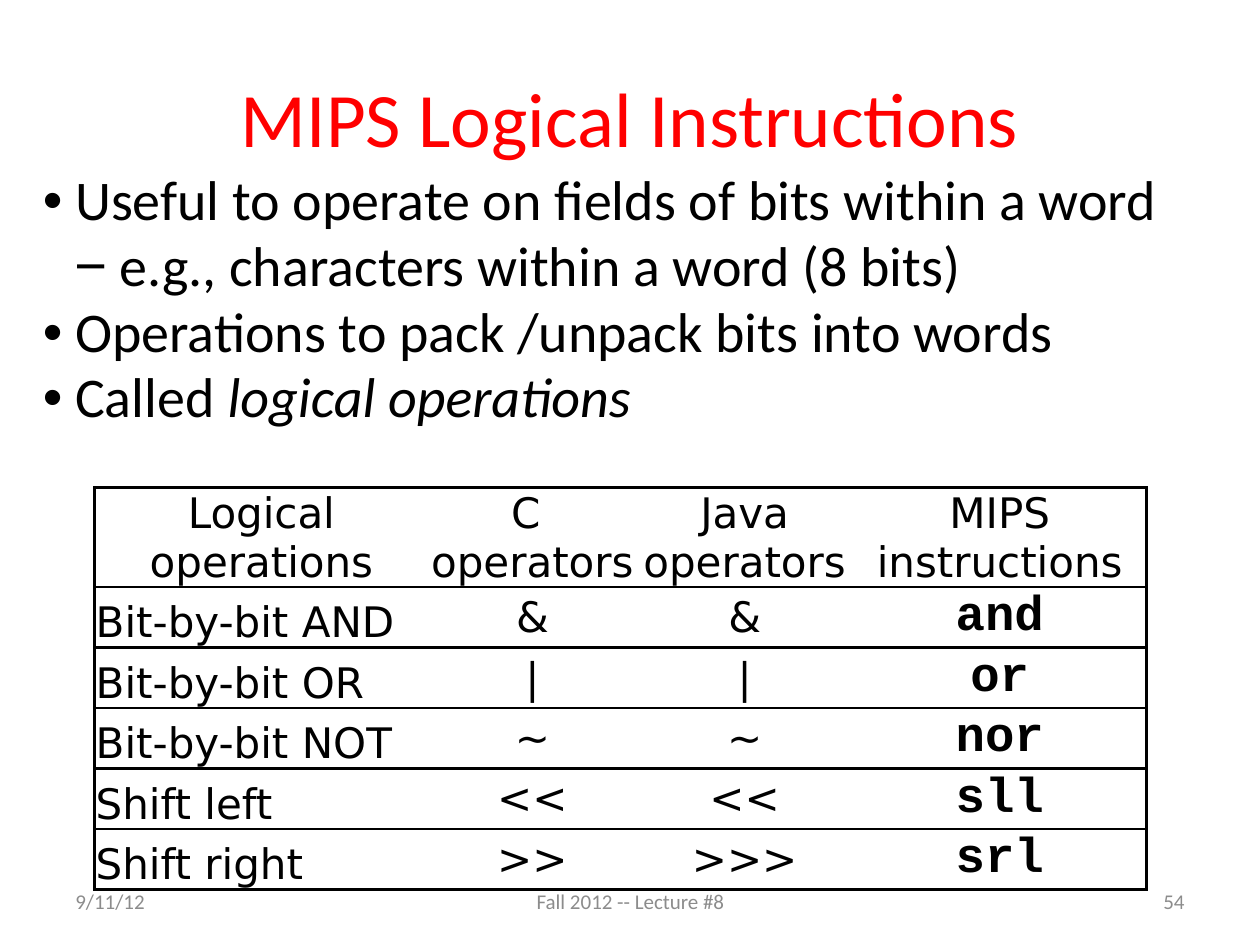
from pptx import Presentation
from pptx.util import Inches, Pt
from pptx.dml.color import RGBColor
from pptx.enum.text import PP_ALIGN, MSO_ANCHOR
from lxml import etree

INK = {"title": "FF0000", "text": "000000", "foot": "8C8C8C", "back": "FFFFFF"}
NS = "{http://schemas.openxmlformats.org/drawingml/2006/main}"


def add_run(para, text, size, font, ink):
    run = para.add_run()
    run.text = text
    run.font.size = Pt(size)
    run.font.name = font
    run.font.color.rgb = RGBColor.from_string(INK[ink])
    return run


def add_edge(cell, side, shown):
    line = etree.SubElement(cell._tc.get_or_add_tcPr(), NS + "ln" + side, w=str(Pt(1.5)))
    if shown:
        fill = etree.SubElement(line, NS + "solidFill")
        etree.SubElement(fill, NS + "srgbClr", val=INK["text"])
    else:
        etree.SubElement(line, NS + "noFill")


deck = Presentation()
deck.slide_width, deck.slide_height = Inches(10), Inches(7.5)
slide = deck.slides.add_slide(deck.slide_layouts[1])

title = slide.shapes.title
title.left, title.top, title.width, title.height = map(Inches, (0.5, 0.3, 9, 1.25))
title.text_frame.vertical_anchor = MSO_ANCHOR.MIDDLE
para = title.text_frame.paragraphs[0]
para.alignment = PP_ALIGN.CENTER
add_run(para, "MIPS Logical Instructions", 44, "Calibri", "title")

body = slide.placeholders[1]
body.left, body.top, body.width, body.height = map(Inches, (0.24, 1.28, 9.52, 2.32))
points = [
    (0, [" Useful to operate on fields of bits within a word"]),
    (1, [" e.g., characters within a word (8 bits)"]),
    (0, [" Operations to pack /unpack bits into words"]),
    (0, [" Called ", "logical operations"]),
]
for i, (level, parts) in enumerate(points):
    para = body.text_frame.paragraphs[0] if i == 0 else body.text_frame.add_paragraph()
    para.level = level
    para.line_spacing = 0.98
    para.space_before = para.space_after = Pt(0)
    props = para._p.get_or_add_pPr()
    props.set("marL", str(Inches(0.5 * level)))
    props.set("indent", str(Inches(-0.25 * level)))
    etree.SubElement(props, NS + "buFont", typeface="Arial")
    etree.SubElement(props, NS + "buChar", char="•−"[level])
    for j, part in enumerate(parts):
        run = add_run(para, part, 32, "Calibri", "text")
        if j:
            run.font.italic = True

rows = [
    ("Logical operations", "C \noperators", "Java operators", "MIPS instructions"),
    ("Bit-by-bit AND", "&", "&", "and"),
    ("Bit-by-bit OR", "|", "|", "or"),
    ("Bit-by-bit NOT", "~", "~", "nor"),
    ("Shift left", "<<", "<<", "sll"),
    ("Shift right", ">>", ">>>", "srl"),
]
widths = [2.65, 1.65, 1.72, 2.33]
last = len(widths) - 1
frame = slide.shapes.add_table(len(rows), len(widths), Inches(0.75), Inches(3.87),
                               Inches(8.35), Inches(3.19))
table = frame.table
table.first_row = table.horz_banding = False
for col, width in zip(table.columns, widths):
    col.width = Inches(width)
for r, row in enumerate(rows):
    table.rows[r].height = Inches(0.48 if r else 0.79)
    for c, text in enumerate(row):
        cell = table.cell(r, c)
        cell.margin_left = cell.margin_right = cell.margin_top = Inches(0.01)
        cell.margin_bottom = 0
        low = r == 0 or c == 0
        cell.vertical_anchor = MSO_ANCHOR.BOTTOM if low else MSO_ANCHOR.MIDDLE
        code = r > 0 and c == last
        size, font = (28, "Courier New") if code else (24, "DejaVu Sans")
        for i, line in enumerate(text.split("\n")):
            para = cell.text_frame.add_paragraph() if i else cell.text_frame.paragraphs[0]
            para.alignment = PP_ALIGN.LEFT if r and c == 0 else PP_ALIGN.CENTER
            add_run(para, line, size, font, "text").font.bold = code
        for side, shown in (("L", c == 0), ("R", c == last), ("T", True), ("B", True)):
            add_edge(cell, side, shown)
        cell.fill.solid()
        cell.fill.fore_color.rgb = RGBColor.from_string(INK["back"])

feet = [
    (0.5, 2.33, "9/11/12", PP_ALIGN.LEFT),
    (3.42, 3.17, "Fall 2012 -- Lecture #8", PP_ALIGN.CENTER),
    (7.17, 2.33, "54", PP_ALIGN.RIGHT),
]
for left, width, text, align in feet:
    box = slide.shapes.add_textbox(Inches(left), Inches(6.95), Inches(width), Inches(0.4))
    box.text_frame.word_wrap = True
    box.text_frame.vertical_anchor = MSO_ANCHOR.MIDDLE
    para = box.text_frame.paragraphs[0]
    para.alignment = align
    add_run(para, text, 12, "Calibri", "foot")

deck.save("out.pptx")
